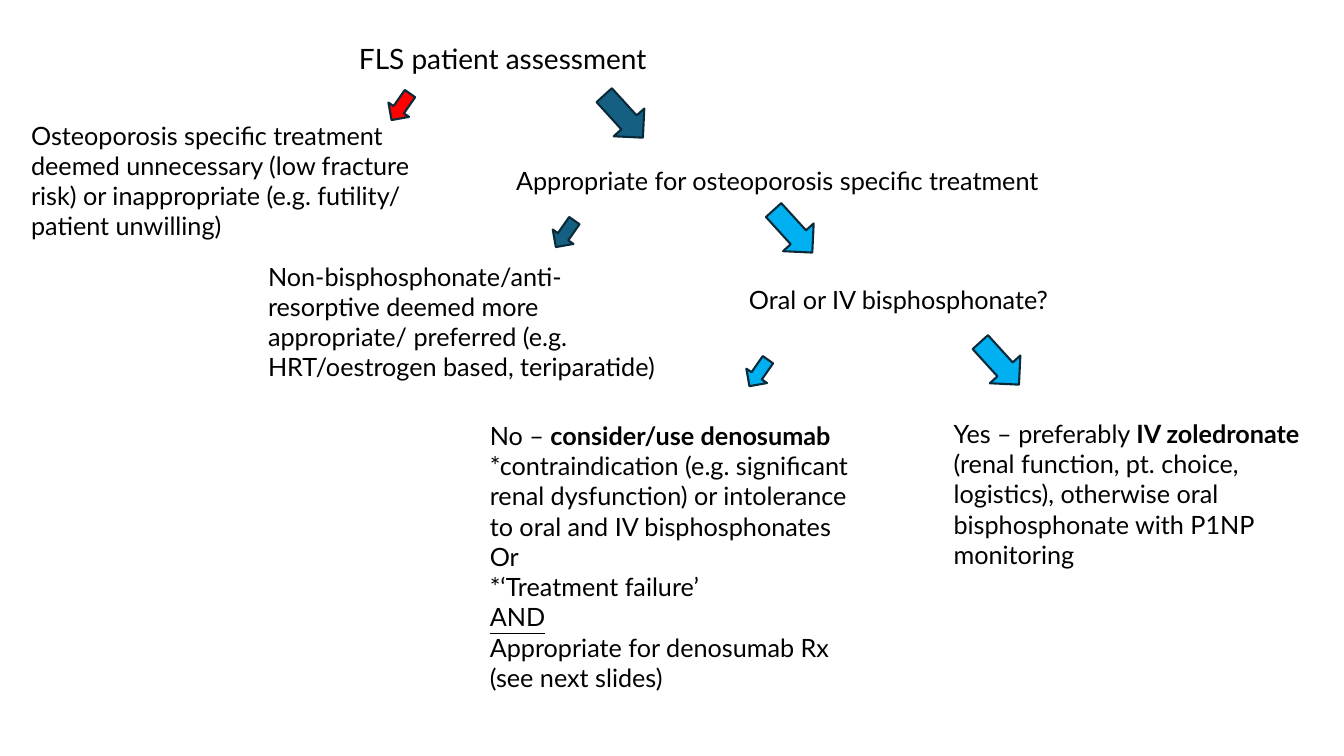
from pptx import Presentation
from pptx.dml.color import RGBColor
from pptx.enum.shapes import MSO_SHAPE
from pptx.enum.text import MSO_ANCHOR, MSO_AUTO_SIZE, PP_ALIGN
from pptx.util import Inches, Pt

DOWN_ARROW = MSO_SHAPE.DOWN_ARROW
TOP, LEFT = MSO_ANCHOR.TOP, PP_ALIGN.LEFT
NO_FIT = MSO_AUTO_SIZE.NONE
FIT_SHAPE = MSO_AUTO_SIZE.SHAPE_TO_FIT_TEXT

FONT = "Lato"
BLACK, OUTLINE = "000000", "092A39"
RED, TEAL, SKY = "FF0000", "156082", "00B0F0"

NO_BRANCH = (0.25, 0.32, 34.9)
YES_BRANCH = (0.41, 0.57, 317.7)

ARROWS = [
    (3.85, 0.9, NO_BRANCH, RED),
    (5.98, 0.87, YES_BRANCH, TEAL),
    (5.48, 2.16, NO_BRANCH, TEAL),
    (7.66, 2.01, YES_BRANCH, SKY),
    (7.4, 3.54, NO_BRANCH, SKY),
    (9.71, 3.32, YES_BRANCH, SKY),
]

STEPS = [
    (0.21, 1.14, 4.27, 1.31, [[
        ("Osteoporosis specific treatment deemed unnecessary (low fracture "
         "risk) or inappropriate (e.g. futility/ patient unwilling)", "")]]),
    (5.02, 1.59, 5.53, 0.4, [[
        ("Appropriate for osteoporosis specific treatment", "")]]),
    (2.56, 2.54, 4.08, 1.31, [[
        ("Non-bisphosphonate/anti-resorptive deemed more appropriate/ "
         "preferred (e.g. HRT/oestrogen based, teriparatide)", "")]]),
    (7.33, 2.77, 4.08, 0.4, [[("Oral or IV bisphosphonate?", "")]]),
    (9.36, 4.1, 3.97, 1.62, [[
        ("Yes – preferably ", ""),
        ("IV zoledronate ", "bold"),
        ("(renal function, pt. choice, logistics), otherwise oral "
         "bisphosphonate with P1NP monitoring", "")]]),
    (4.76, 4.12, 3.97, 2.83, [
        [("No – ", ""), ("consider/use denosumab", "bold")],
        [("*contraindication (e.g. significant renal dysfunction) or "
          "intolerance to oral and IV bisphosphonates", "")],
        [("Or", "")],
        [("*‘Treatment failure’", "")],
        [("AND", "underline")],
        [("Appropriate for denosumab Rx (see next slides)", "")]]),
]


def rgb(value):
    """Turn a hex string into a colour."""
    return RGBColor.from_string(value)


def format_run(r, size, style=""):
    """Set the font of a run, with bold or underline if asked."""
    r.font.name = FONT
    r.font.size = Pt(size)
    r.font.color.rgb = rgb(BLACK)
    r.font.bold = style == "bold"
    r.font.underline = style == "underline"


def set_title(s, text):
    """Place the starting point of the pathway in the title placeholder."""
    sp = s.shapes.title
    sp.left, sp.top = Inches(3.46), Inches(0.36)
    sp.width, sp.height = Inches(4.65), Inches(0.44)
    tf = sp.text_frame
    tf.text = text
    tf.word_wrap = True
    tf.auto_size = NO_FIT
    tf.vertical_anchor = TOP
    p = tf.paragraphs[0]
    p.alignment = LEFT
    format_run(p.runs[0], 20)


def add_step(s, left, top, width, height, paragraphs):
    """Add a step of the pathway from paragraphs of (text, style) runs."""
    box = s.shapes.add_textbox(Inches(left), Inches(top),
                               Inches(width), Inches(height))
    tf = box.text_frame
    tf.word_wrap = True
    tf.auto_size = FIT_SHAPE
    for i, runs in enumerate(paragraphs):
        p = tf.add_paragraph() if i else tf.paragraphs[0]
        for text, style in runs:
            r = p.add_run()
            r.text = text
            format_run(r, 18, style)


def add_arrow(s, left, top, branch, color):
    """Add a rotated block arrow that leads to the next step."""
    width, height, rotation = branch
    sp = s.shapes.add_shape(DOWN_ARROW, Inches(left), Inches(top),
                            Inches(width), Inches(height))
    sp.rotation = rotation
    sp.shadow.inherit = False
    sp.fill.solid()
    sp.fill.fore_color.rgb = rgb(color)
    sp.line.color.rgb = rgb(OUTLINE)
    sp.line.width = Pt(1.5)


def main():
    """Build the treatment pathway slide."""
    prs = Presentation()
    prs.slide_width, prs.slide_height = Inches(13.33), Inches(7.5)
    s = prs.slides.add_slide(prs.slide_layouts[5])
    set_title(s, "FLS patient assessment")
    for arrow in ARROWS:
        add_arrow(s, *arrow)
    for step in STEPS:
        add_step(s, *step)
    prs.save("out.pptx")


if __name__ == "__main__":
    main()
